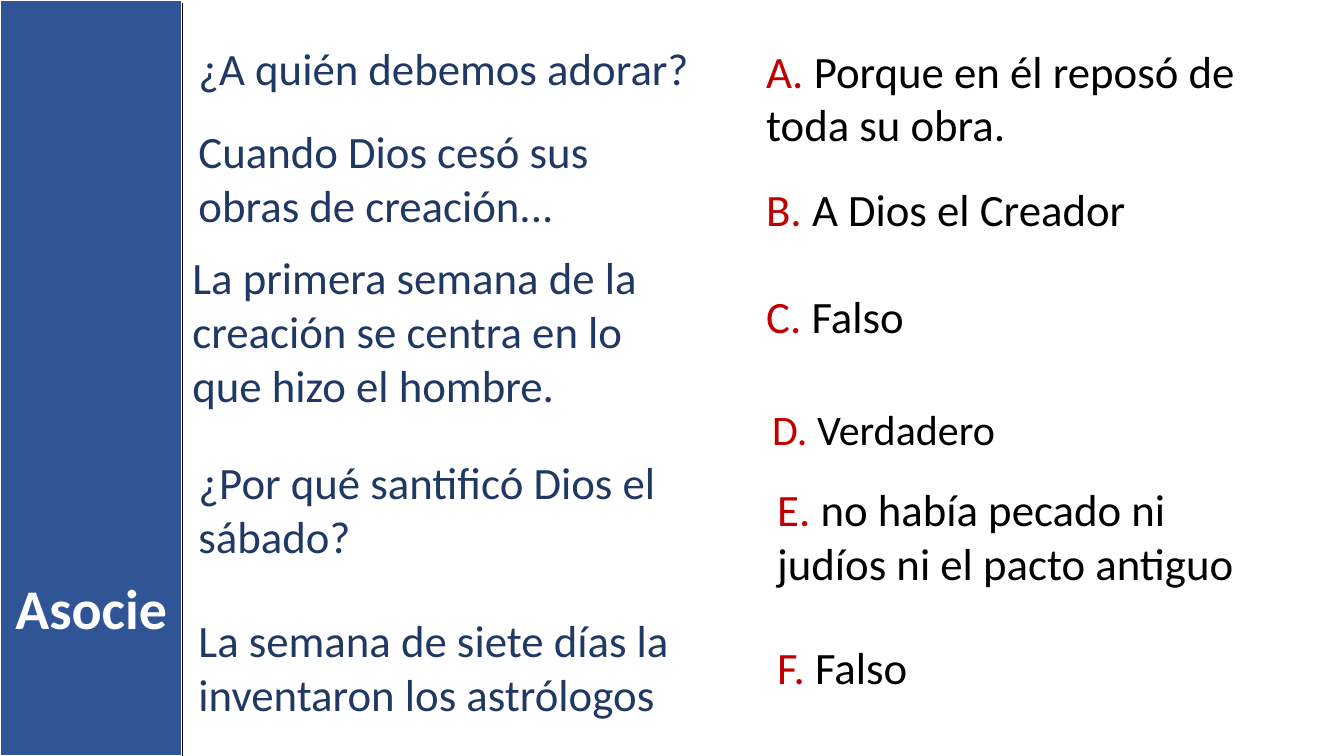
from lxml import etree
from pptx import Presentation
from pptx.dml.color import RGBColor
from pptx.enum import shapes, text
from pptx.oxml.ns import qn
from pptx.util import Inches, Pt

BLUE = RGBColor(0x2F, 0x55, 0x97)
NAVY = RGBColor(0x20, 0x38, 0x64)
RED = RGBColor(0xC0, 0x00, 0x00)
BLACK = RGBColor(0x00, 0x00, 0x00)
WHITE = RGBColor(0xFF, 0xFF, 0xFF)

prs = Presentation()
prs.slide_width, prs.slide_height = Inches(13.33), Inches(7.5)
s = prs.slides.add_slide(prs.slide_layouts[6])


def add_text(words, x, y, w, h, color=BLACK, size=32, bold=None, align=None, label=""):
    tf = s.shapes.add_textbox(Inches(x), Inches(y), Inches(w), Inches(h)).text_frame
    tf.word_wrap = True
    tf.auto_size = text.MSO_AUTO_SIZE.SHAPE_TO_FIT_TEXT
    p = tf.paragraphs[0]
    p.alignment = align
    for part, part_color in ((label, RED), (words, color)):
        if part:
            r = p.add_run()
            r.text = part
            r.font.name = "Calibri"
            r.font.size = Pt(size)
            r.font.bold = bold
            r.font.color.rgb = part_color


band = s.shapes.add_shape(shapes.MSO_SHAPE.RECTANGLE, 0, 0, Inches(1.81), Inches(7.5))
band.shadow.inherit = False
band.fill.solid()
band.fill.fore_color.rgb = BLUE
band.line.color.rgb = WHITE
band.line.width = Pt(1.5)

questions = [
    ("¿A quién debemos adorar?", 1.87, 0.36, 5.1, 0.64),
    ("Cuando Dios cesó sus obras de creación...", 1.87, 1.18, 4.47, 1.18),
    ("La primera semana de la creación se centra en lo que hizo el hombre.", 1.81, 2.43, 5.1, 1.72),
    ("¿Por qué santificó Dios el sábado?", 1.87, 4.46, 4.94, 1.18),
    ("La semana de siete días la inventaron los astrólogos", 1.87, 6.03, 4.94, 1.18),
]
for words, x, y, w, h in questions:
    add_text(words, x, y, w, h, color=NAVY)

answers = [
    ("Porque en él reposó de toda su obra.", 7.5, 0.38, 5.04, 1.18, 32),
    ("A Dios el Creador", 7.5, 1.75, 5.29, 0.64, 32),
    ("Falso", 7.5, 2.82, 4.88, 0.64, 32),
    ("Verdadero", 7.56, 3.95, 5.29, 0.61, 30),
    ("no había pecado ni judíos ni el pacto antiguo", 7.61, 4.73, 5.18, 1.18, 32),
    ("Falso", 7.61, 6.3, 4.15, 0.64, 32),
]
for letter, (words, x, y, w, h, size) in zip("ABCDEF", answers):
    add_text(words, x, y, w, h, size=size, label=f"{letter}. ")

add_text("Asocie", 0, 5.64, 1.81, 0.77, color=WHITE, size=40, bold=True,
         align=text.PP_ALIGN.CENTER)

edge = s.shapes.add_connector(shapes.MSO_CONNECTOR.STRAIGHT,
                              Inches(1.81), Inches(0.03), Inches(1.81), Inches(7.5))
edge.line.color.rgb = BLACK
edge.line.width = Pt(1)
etree.SubElement(edge._element.spPr, qn("a:effectLst"))

prs.save("out.pptx")
